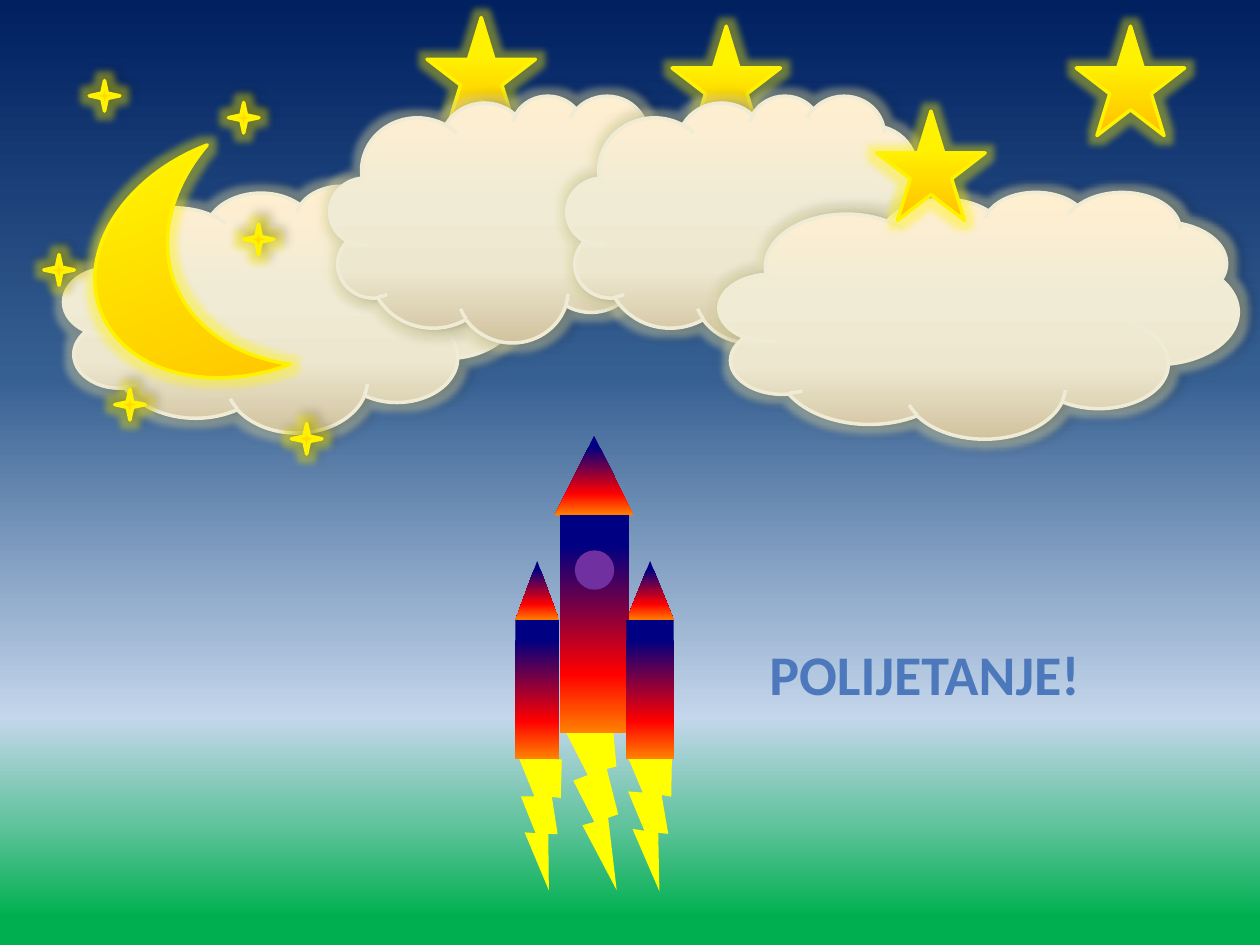
import pptx
import pptx.util
import pptx.dml.color
import pptx.enum.shapes
import pptx.oxml.ns
from lxml import etree

Pt = pptx.util.Pt
RGB = pptx.dml.color.RGBColor
SHAPE = pptx.enum.shapes.MSO_SHAPE
qn = pptx.oxml.ns.qn

NIGHT = RGB(0x00, 0x20, 0x60)
DUSK = RGB(0x37, 0x60, 0x92)
HORIZON = RGB(0xC4, 0xD6, 0xEB)
MEADOW = RGB(0x62, 0xC3, 0x9E)
GRASS = RGB(0x00, 0xB0, 0x50)
YELLOW = RGB(0xFF, 0xF2, 0x00)
AMBER = RGB(0xFF, 0xC0, 0x00)
FLAME = RGB(0xFF, 0xFF, 0x00)
NAVY = RGB(0x00, 0x00, 0x82)
RED = RGB(0xFF, 0x00, 0x00)
ORANGE = RGB(0xFF, 0x82, 0x00)
PURPLE = RGB(0x70, 0x30, 0xA0)
CREAM = RGB(0xFF, 0xEF, 0xD1)
IVORY = RGB(0xF0, 0xEB, 0xD5)
SAND = RGB(0xED, 0xE7, 0xCF)
TAN = RGB(0xD1, 0xC3, 0x9F)
HALO = RGB(0xF0, 0xEB, 0xB0)
BLACK = RGB(0x00, 0x00, 0x00)
TITLE_BLUE = RGB(0x4D, 0x79, 0xBC)

SKY_STOPS = [(0, NIGHT), (40, DUSK), (76, HORIZON), (87, MEADOW), (97, GRASS)]
STAR_STOPS = [(33, YELLOW), (99, AMBER)]
MOON_STOPS = [(11, YELLOW), (100, AMBER)]
SPARKLE_STOPS = [(9, YELLOW), (100, AMBER)]
ROCKET_STOPS = [(14, NAVY), (73, RED), (100, ORANGE)]
CLOUD_STOPS = [(2, CREAM), (44, IVORY), (71, SAND), (100, TAN)]


def add_color(parent, color, alpha=None):
    node = etree.SubElement(parent, qn("a:srgbClr"), val=str(color))
    if alpha is not None:
        etree.SubElement(node, qn("a:alpha"), val=str(alpha * 1000))


def fill_gradient(fill, element, stops):
    fill.gradient()
    gradient = next(element.iter(qn("a:gradFill")))
    for child in list(gradient):
        gradient.remove(child)
    stop_list = etree.SubElement(gradient, qn("a:gsLst"))
    for position, color in stops:
        add_color(etree.SubElement(stop_list, qn("a:gs"), pos=str(position * 1000)), color)
    etree.SubElement(gradient, qn("a:lin"), ang="5400000", scaled="0")


def add_figure(shapes, kind, left, top, width, height, paint, rotation=0):
    figure = shapes.add_shape(kind, Pt(left), Pt(top), Pt(width), Pt(height))
    figure.rotation = rotation
    figure.shadow.inherit = False
    figure.line.fill.background()
    if isinstance(paint, list):
        fill_gradient(figure.fill, figure.element, paint)
    else:
        figure.fill.solid()
        figure.fill.fore_color.rgb = paint
    return figure


def add_glow(figure, line_color, glow_color, shadow_angle=None):
    figure.line.color.rgb = line_color
    figure.line.width = Pt(2)
    effects = next(figure.element.iter(qn("a:effectLst")))
    glow = etree.SubElement(effects, qn("a:glow"), rad=str(Pt(8)))
    add_color(glow, glow_color, 40)
    if shadow_angle is not None:
        shadow = etree.SubElement(
            effects, qn("a:outerShdw"), blurRad=str(Pt(4)), dist=str(Pt(3)),
            dir=str(shadow_angle * 60000), rotWithShape="0")
        add_color(shadow, BLACK, 40)


def add_stars(shapes, places):
    for left, top in places:
        star = add_figure(shapes, SHAPE.STAR_5_POINT, left, top, 62, 62.5, STAR_STOPS)
        add_glow(star, YELLOW, YELLOW)


def add_sparkles(shapes, places):
    for left, top in places:
        sparkle = add_figure(shapes, SHAPE.STAR_4_POINT, left, top, 17.5, 17.5, SPARKLE_STOPS)
        add_glow(sparkle, YELLOW, YELLOW, 315)


def add_clouds(page, places):
    clouds = page.shapes.add_group_shape().shapes
    for left, top, width in places:
        cloud = add_figure(clouds, SHAPE.CLOUD, left, top, width, 141, CLOUD_STOPS)
        add_glow(cloud, IVORY, HALO, 0)


def add_rocket(page):
    rocket = page.shapes.add_group_shape().shapes
    for left, top, width, height, rotation in [
            (340, 430.5, 61, 67.5, 34.1),
            (281, 432, 54.5, 67.5, 31.8),
            (312, 409, 57, 93, 18.9)]:
        add_figure(rocket, SHAPE.LIGHTNING_BOLT, left, top, width, height, FLAME, rotation)
    for left, top, width, height in [
            (317, 249, 45, 45.5), (358, 320.5, 27, 34), (294.5, 320.5, 25, 34)]:
        add_figure(rocket, SHAPE.ISOSCELES_TRIANGLE, left, top, width, height, ROCKET_STOPS)
    for left, top, width, height in [
            (320, 294.5, 39.5, 124.5), (358, 354.5, 27, 79), (294.5, 354.5, 25, 79)]:
        add_figure(rocket, SHAPE.RECTANGLE, left, top, width, height, ROCKET_STOPS)
    add_figure(rocket, SHAPE.OVAL, 328.5, 314.5, 22.5, 22.5, PURPLE)


def add_moon(page):
    moon = add_figure(page.shapes, SHAPE.MOON, 54.5, 94.5, 90.5, 134, MOON_STOPS, 339.3)
    add_glow(moon, YELLOW, YELLOW)


def add_caption(page, text):
    box = page.shapes.add_textbox(Pt(432.5), Pt(362), Pt(198.5), Pt(67.5))
    box.text_frame.word_wrap = True
    box.text_frame.text = text
    font = box.text_frame.paragraphs[0].runs[0].font
    font.name = "Calibri"
    font.size = Pt(32)
    font.bold = True
    font.color.rgb = TITLE_BLUE


def main():
    deck = pptx.Presentation()
    deck.slide_width = Pt(720)
    deck.slide_height = Pt(540)
    page = deck.slides.add_slide(deck.slide_layouts[6])
    fill_gradient(page.background.fill, page.element, SKY_STOPS)
    add_stars(page.shapes, [(384, 15), (244, 10)])
    add_rocket(page)
    add_clouds(page, [(36.5, 106, 260), (188.5, 54.5, 204),
                      (324, 54.5, 204), (411, 109.5, 296.5)])
    add_moon(page)
    add_sparkles(page.shapes, [(65.5, 222.5), (25, 145.5), (51, 46),
                               (166.5, 242), (130.5, 58.5), (139, 128)])
    add_stars(page.shapes, [(501, 63.5), (615, 15)])
    add_caption(page, "POLIJETANJE!")
    deck.save("out.pptx")


if __name__ == "__main__":
    main()
